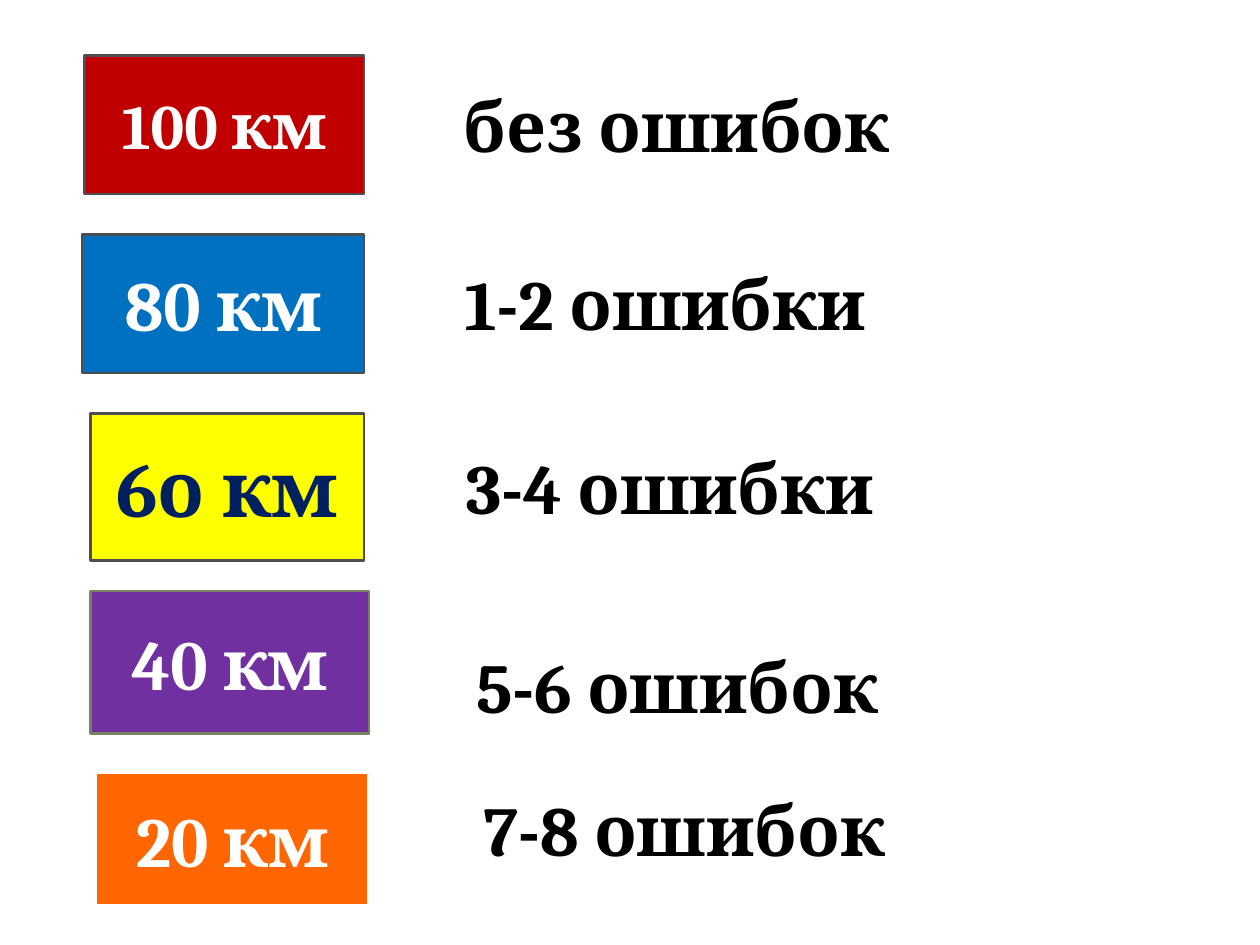
from pptx import Presentation
from pptx.dml.color import RGBColor
from pptx.enum.shapes import MSO_SHAPE
from pptx.enum.text import MSO_ANCHOR, MSO_AUTO_SIZE, PP_ALIGN
from pptx.util import Inches, Pt

RECTANGLE = MSO_SHAPE.RECTANGLE
MIDDLE = MSO_ANCHOR.MIDDLE
FIT_SHAPE = MSO_AUTO_SIZE.SHAPE_TO_FIT_TEXT
CENTER = PP_ALIGN.CENTER

FONT = "Cambria"
WHITE = RGBColor(0xFF, 0xFF, 0xFF)
BLACK = RGBColor(0x00, 0x00, 0x00)
RED = RGBColor(0xC0, 0x00, 0x00)
BLUE = RGBColor(0x00, 0x70, 0xC0)
YELLOW = RGBColor(0xFF, 0xFF, 0x00)
PURPLE = RGBColor(0x70, 0x30, 0xA0)
ORANGE = RGBColor(0xFF, 0x66, 0x00)
NAVY = RGBColor(0x00, 0x20, 0x60)
GRAY = RGBColor(0x4E, 0x4E, 0x52)
OLIVE = RGBColor(0x76, 0x81, 0x60)

# text, (left, top, width, height), fill, line colour, line width, text size, text colour
DISTANCES = [
    ("100 км", (0.67, 0.44, 2.22, 1.1), RED, GRAY, 1.5, 36, WHITE),
    ("80 км", (0.65, 1.86, 2.24, 1.1), BLUE, GRAY, 1.5, 40, WHITE),
    ("6о км", (0.72, 3.28, 2.17, 1.17), YELLOW, GRAY, 1.5, 44, NAVY),
    ("40 км", (0.72, 4.69, 2.21, 1.13), PURPLE, OLIVE, 1.5, 40, WHITE),
    ("20 км", (0.76, 6.13, 2.17, 1.06), ORANGE, WHITE, 2, 40, WHITE),
]

# text, (left, top, width, height), wrap
MISTAKES = [
    ("без ошибок", (3.58, 0.61, 3.86, 0.77), True),
    ("1-2 ошибки", (3.59, 2.02, 3.47, 0.77), False),
    ("3-4 ошибки", (3.6, 3.48, 3.47, 0.77), False),
    ("5-6 ошибок", (3.68, 5.06, 3.43, 0.77), False),
    ("7-8 ошибок", (3.74, 6.19, 3.43, 0.77), False),
]


def write_text(tf, text, size, color):
    p = tf.paragraphs[0]
    p.text = text
    p.font.name = FONT
    p.font.size = Pt(size)
    p.font.bold = True
    p.font.color.rgb = color
    return p


def add_distance_card(slide, text, box, fill, line, line_width, size, color):
    sp = slide.shapes.add_shape(RECTANGLE, *map(Inches, box))
    sp.shadow.inherit = False
    sp.fill.solid()
    sp.fill.fore_color.rgb = fill
    sp.line.color.rgb = line
    sp.line.width = Pt(line_width)
    sp.text_frame.vertical_anchor = MIDDLE
    write_text(sp.text_frame, text, size, color).alignment = CENTER


def add_mistake_label(slide, text, box, wrap):
    tf = slide.shapes.add_textbox(*map(Inches, box)).text_frame
    tf.word_wrap = wrap
    tf.auto_size = FIT_SHAPE
    write_text(tf, text, 40, BLACK)


def main():
    prs = Presentation()
    prs.slide_width = Inches(10)
    prs.slide_height = Inches(7.5)
    slide = prs.slides.add_slide(prs.slide_layouts[6])
    for card in DISTANCES:
        add_distance_card(slide, *card)
    for label in MISTAKES:
        add_mistake_label(slide, *label)
    prs.save("out.pptx")


if __name__ == "__main__":
    main()
